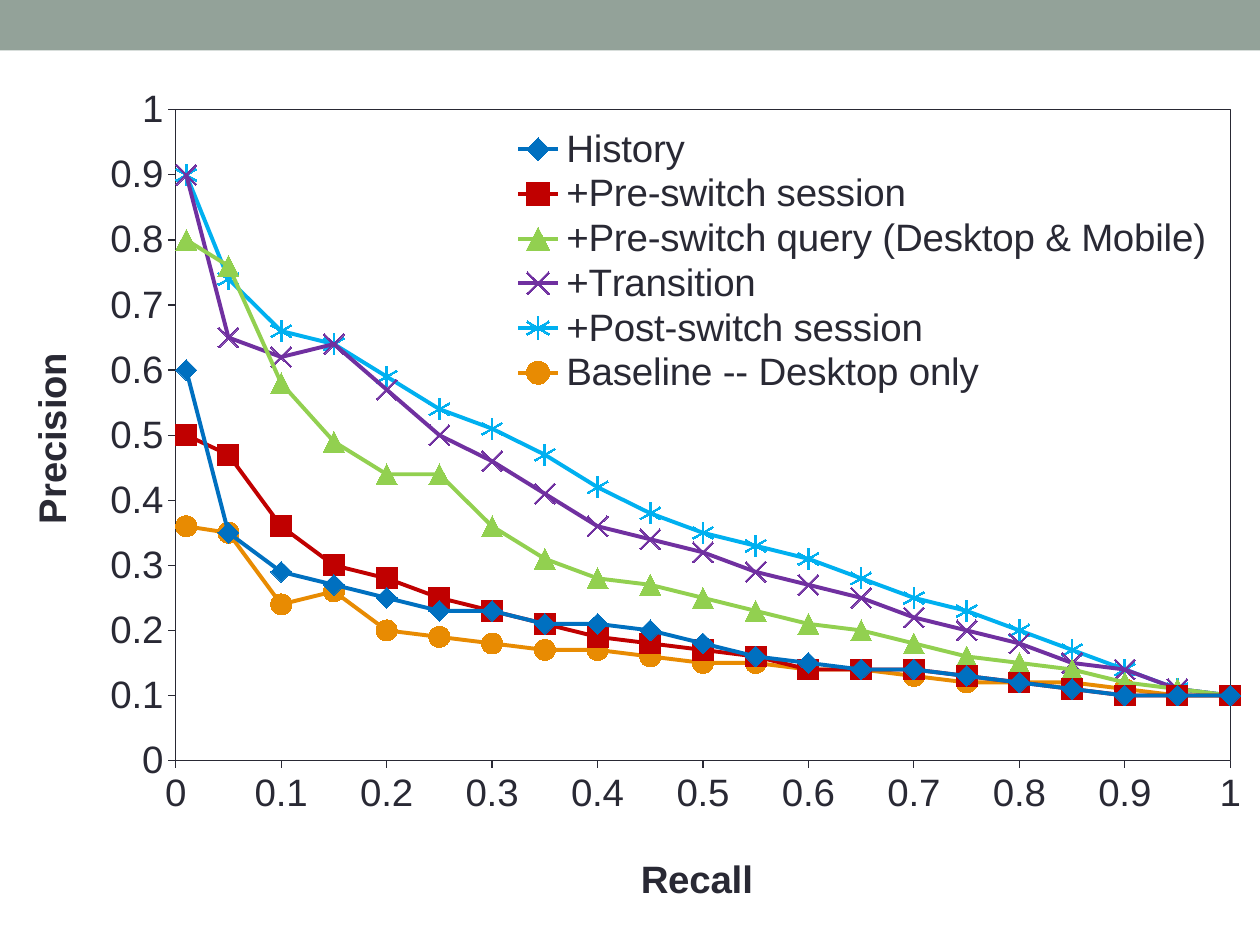
from lxml.etree import SubElement, Element, QName
from pptx import Presentation
from pptx.chart.data import XyChartData
from pptx.dml.color import RGBColor
from pptx.enum.chart import XL_CHART_TYPE as Kind, XL_LEGEND_POSITION as Side
from pptx.enum.chart import XL_MARKER_STYLE as Mark, XL_TICK_MARK as Tick
from pptx.enum.shapes import MSO_SHAPE as Shape
from pptx.oxml import parse_xml
from pptx.oxml.ns import qn, nsdecls
from pptx.util import Cm, Pt

INK = RGBColor(0x29, 0x29, 0x34)
SAGE = RGBColor(0x93, 0xA2, 0x99)
BLUE = RGBColor(0x00, 0x70, 0xC0)
RED = RGBColor(0xC0, 0x00, 0x00)
GREEN = RGBColor(0x92, 0xD0, 0x50)
PURPLE = RGBColor(0x70, 0x30, 0xA0)
SKY = RGBColor(0x00, 0xB0, 0xF0)
ORANGE = RGBColor(0xE8, 0x8B, 0x02)
FONT, SIZE = "Arial", 22

RECALL = [0.01] + [n / 20 for n in range(1, 21)]
CURVES = [
    ("History", BLUE, Mark.DIAMOND,
     [0.6, 0.35, 0.29, 0.27, 0.25, 0.23, 0.23, 0.21, 0.21, 0.2, 0.18,
      0.16, 0.15, 0.14, 0.14, 0.13, 0.12, 0.11, 0.1, 0.1, 0.1]),
    ("+Pre-switch session", RED, Mark.SQUARE,
     [0.5, 0.47, 0.36, 0.3, 0.28, 0.25, 0.23, 0.21, 0.19, 0.18, 0.17,
      0.16, 0.14, 0.14, 0.14, 0.13, 0.12, 0.11, 0.1, 0.1, 0.1]),
    ("+Pre-switch query (Desktop & Mobile)", GREEN, Mark.TRIANGLE,
     [0.8, 0.76, 0.58, 0.49, 0.44, 0.44, 0.36, 0.31, 0.28, 0.27, 0.25,
      0.23, 0.21, 0.2, 0.18, 0.16, 0.15, 0.14, 0.12, 0.11, 0.1]),
    ("+Transition", PURPLE, Mark.X,
     [0.9, 0.65, 0.62, 0.64, 0.57, 0.5, 0.46, 0.41, 0.36, 0.34, 0.32,
      0.29, 0.27, 0.25, 0.22, 0.2, 0.18, 0.15, 0.14, 0.11, 0.1]),
    ("+Post-switch session", SKY, Mark.STAR,
     [0.9, 0.74, 0.66, 0.64, 0.59, 0.54, 0.51, 0.47, 0.42, 0.38, 0.35,
      0.33, 0.31, 0.28, 0.25, 0.23, 0.2, 0.17, 0.14, 0.11, 0.1]),
    ("Baseline -- Desktop only", ORANGE, Mark.CIRCLE,
     [0.36, 0.35, 0.24, 0.26, 0.2, 0.19, 0.18, 0.17, 0.17, 0.16, 0.15,
      0.15, 0.14, 0.14, 0.13, 0.12, 0.12, 0.12, 0.11, 0.1, 0.1]),
]


def place(node, spot, *box, inner=False):
    old = node.find(qn("c:layout"))
    if old is not None:
        node.remove(old)
    layout = Element(qn("c:layout"))
    frame = SubElement(layout, qn("c:manualLayout"))
    if inner:
        SubElement(frame, qn("c:layoutTarget"), val="inner")
    for tag in ("xMode", "yMode"):
        SubElement(frame, qn("c:" + tag), val="edge")
    for tag, val in zip("xywh", box):
        SubElement(frame, qn("c:" + tag), val=str(val))
    node.insert(spot, layout)


def style(font, size=SIZE, bold=False, color=INK):
    font.name, font.size, font.bold = FONT, Pt(size), bold
    font.color.rgb = color


def label(axis, text, at, **form):
    title = axis.axis_title
    run = title.text_frame.paragraphs[0].add_run()
    run.text = text
    style(run.font, **form)
    place(title._element, 1, *at)


def set_axis(axis, text, at):
    axis.minimum_scale, axis.maximum_scale, axis.major_unit = 0, 1, 0.1
    axis.has_major_gridlines = False
    axis.major_tick_mark, axis.minor_tick_mark = Tick.OUTSIDE, Tick.NONE
    axis.format.line.color.rgb = INK
    axis.format.line.width = Pt(0.75)
    axis.tick_labels.number_format = "General"
    axis.tick_labels.number_format_is_linked = False
    style(axis.tick_labels.font)
    label(axis, text, at, bold=True)


def add_curves(slide):
    data = XyChartData()
    for name, _, _, vals in CURVES:
        line = data.add_series(name)
        for x, y in zip(RECALL, vals):
            line.add_data_point(x, y)
    chart = slide.shapes.add_chart(
        Kind.XY_SCATTER_SMOOTH, Cm(-0.64), Cm(1.7), Cm(26.31), Cm(16.71), data).chart
    chart.has_title = False
    style(chart.font)
    for line, (_, color, mark, _) in zip(chart.plots[0].series, CURVES):
        line.smooth = True
        line.format.line.color.rgb = color
        line.format.line.width = Pt(2.25)
        dot = line.marker
        dot.style, dot.size = mark, 12
        dot.format.line.color.rgb = color
        if mark in (Mark.X, Mark.STAR):
            dot.format.fill.background()
        else:
            dot.format.fill.solid()
            dot.format.fill.fore_color.rgb = color
    set_axis(chart.category_axis, "Recall", (0.51, 0.93))
    set_axis(chart.value_axis, "Precision", (0.04, 0.32))
    chart.has_legend = True
    key = chart.legend
    key.position, key.include_in_layout = Side.RIGHT, False
    style(key.font)
    place(key._element, 1, 0.41, 0.05, 0.55, 0.33)
    area = chart._chartSpace.chart.plotArea
    place(area, 0, 0.159, 0.031, 0.808, 0.792, inner=True)
    area.append(parse_xml(
        f'<c:spPr {nsdecls("c", "a")}><a:noFill/><a:ln w="{Pt(0.75)}"><a:solidFill>'
        f'<a:srgbClr val="{INK}"/></a:solidFill></a:ln></c:spPr>'))


def main():
    deck = Presentation()
    deck.slide_width, deck.slide_height = Cm(25.4), Cm(19.05)
    slide = deck.slides.add_slide(deck.slide_layouts[6])
    band = slide.shapes.add_shape(Shape.RECTANGLE, 0, 0, deck.slide_width, Cm(1.02))
    band.shadow.inherit = False
    band.fill.solid()
    band.fill.fore_color.rgb = SAGE
    band.line.fill.background()
    add_curves(slide)
    deck.save("out.pptx")


if __name__ == "__main__":
    main()
